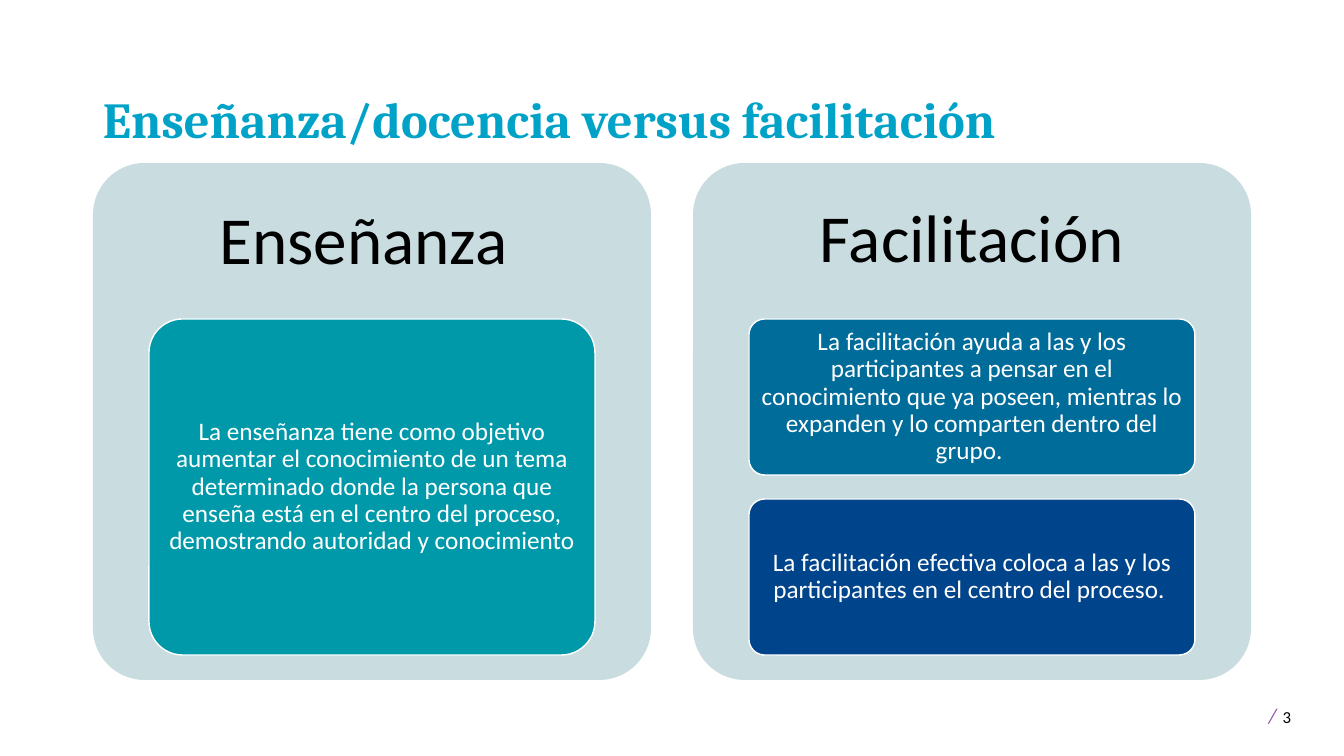
from pptx import Presentation
from pptx.dml.color import RGBColor
from pptx.enum.shapes import MSO_SHAPE
from pptx.enum.text import MSO_ANCHOR, PP_ALIGN
from pptx.util import Pt

TITLE_BLUE = RGBColor(0x00, 0xA2, 0xC7)
PANEL_GREY = RGBColor(0xC9, 0xDD, 0xE1)
TEAL = RGBColor(0x00, 0x99, 0xA9)
BLUE = RGBColor(0x00, 0x6C, 0x9A)
NAVY = RGBColor(0x00, 0x45, 0x8B)
PURPLE = RGBColor(0x90, 0x53, 0xA1)
BLACK = RGBColor(0x00, 0x00, 0x00)
WHITE = RGBColor(0xFF, 0xFF, 0xFF)

TITLE = "Enseñanza/docencia versus facilitación"
PANELS = [
    ([("Enseñanza", {"size": 48}), (" ", {"size": 54})], [
        ("La enseñanza tiene como objetivo aumentar el conocimiento de un tema "
         "determinado donde la persona que enseña está en el centro del proceso, "
         "demostrando autoridad y conocimiento", TEAL),
    ]),
    ([("Facilitación", {"size": 48})], [
        ("La facilitación ayuda a las y los participantes a pensar en el "
         "conocimiento que ya poseen, mientras lo expanden y lo comparten "
         "dentro del grupo. ", BLUE),
        ("La facilitación efectiva coloca a las y los participantes en el "
         "centro del proceso. ", NAVY),
    ]),
]
PAGE_NUMBER = [
    (" ", {"size": 18}),
    ("/", {"size": 15, "color": PURPLE, "italic": True}),
    (" ", {"size": 18}),
    ("3", {"size": 12}),
]

# Lengths in px
PAGE_WIDTH, PAGE_HEIGHT = 1344, 756
PANEL_LEFT, PANEL_TOP, PANEL_WIDTH, PANEL_HEIGHT = 93, 163, 558, 517
PANEL_STEP = 600
HEADING_HEIGHT = 155
CARD_INDENT, CARD_TOP, CARDS_HEIGHT, CARD_GAP = 56, 319, 336, 24
CARD_WIDTH = PANEL_WIDTH - 2 * CARD_INDENT


def px(length):
    return round(length * 914400 / 100.8)


def write(shape, spans, anchor=MSO_ANCHOR.TOP, align=PP_ALIGN.LEFT,
          spacing=None, margins=(10, 5), font="Calibri"):
    """Fill a shape with one paragraph of (text, format) spans."""
    frame = shape.text_frame
    frame.word_wrap = True
    frame.vertical_anchor = anchor
    frame.margin_left = frame.margin_right = px(margins[0])
    frame.margin_top = frame.margin_bottom = px(margins[1])
    para = frame.paragraphs[0]
    para.alignment = align
    para.line_spacing = spacing
    for text, style in spans:
        span = para.add_run()
        span.text = text
        span.font.name = font
        span.font.size = Pt(style["size"])
        span.font.color.rgb = style.get("color", BLACK)
        span.font.bold = style.get("bold", False)
        span.font.italic = style.get("italic", False)


def add_box(page, *place):
    return page.shapes.add_textbox(*map(px, place))


def add_rounded(page, *place, fill, line=None):
    shape = page.shapes.add_shape(MSO_SHAPE.ROUNDED_RECTANGLE, *map(px, place))
    shape.adjustments[0] = 0.1
    shape.shadow.inherit = False
    shape.fill.solid()
    shape.fill.fore_color.rgb = fill
    if line is None:
        shape.line.fill.background()
    else:
        shape.line.color.rgb = line
        shape.line.width = Pt(1)
    return shape


def add_panel(page, left, heading, cards):
    centred = {"anchor": MSO_ANCHOR.MIDDLE, "align": PP_ALIGN.CENTER, "spacing": 0.9}
    add_rounded(page, left, PANEL_TOP, PANEL_WIDTH, PANEL_HEIGHT, fill=PANEL_GREY)
    heading_box = add_box(page, left, PANEL_TOP, PANEL_WIDTH, HEADING_HEIGHT)
    write(heading_box, heading, margins=(20, 20), **centred)

    card_height = (CARDS_HEIGHT - CARD_GAP * (len(cards) - 1)) / len(cards)
    for row, (text, fill) in enumerate(cards):
        top = CARD_TOP + row * (card_height + CARD_GAP)
        card = add_rounded(page, left + CARD_INDENT, top, CARD_WIDTH, card_height,
                           fill=fill, line=WHITE)
        write(card, [(text, {"size": 18, "color": WHITE})], margins=(5, 4), **centred)


def main():
    deck = Presentation()
    deck.slide_width, deck.slide_height = px(PAGE_WIDTH), px(PAGE_HEIGHT)
    page = deck.slides.add_slide(deck.slide_layouts[6])

    write(add_box(page, 1253, 693, 88, 40), PAGE_NUMBER)
    for column, (heading, cards) in enumerate(PANELS):
        add_panel(page, PANEL_LEFT + column * PANEL_STEP, heading, cards)
    write(add_box(page, PANEL_LEFT, 40, 1159, 114),
          [(TITLE, {"size": 36, "color": TITLE_BLUE, "bold": True})],
          anchor=MSO_ANCHOR.BOTTOM, spacing=0.9, font="Cambria")

    deck.save("out.pptx")


if __name__ == "__main__":
    main()
